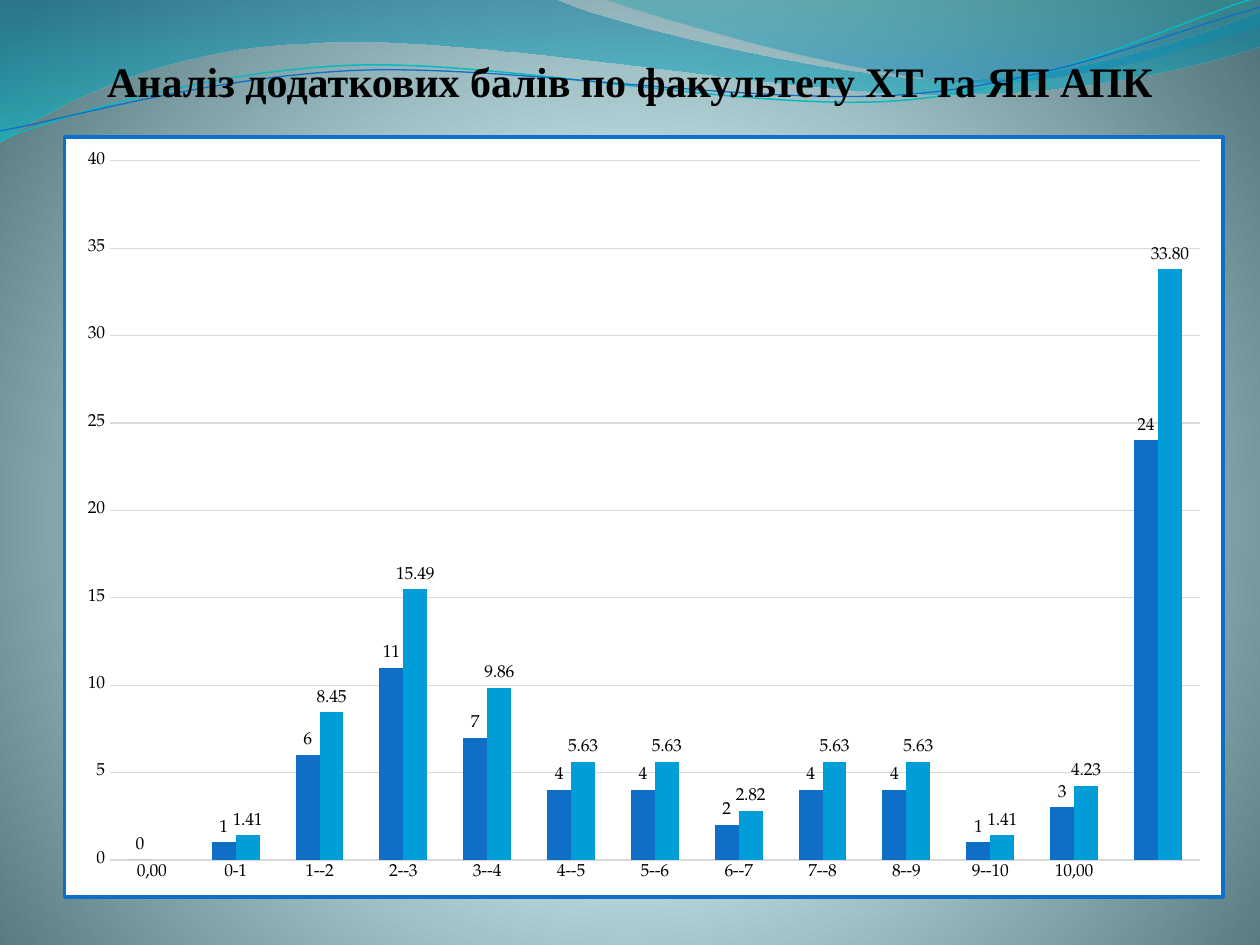
from math import cos, radians, sin

from lxml import etree
from pptx import Presentation
from pptx.chart.data import CategoryChartData
from pptx.dml.color import RGBColor
from pptx.enum.chart import XL_CHART_TYPE, XL_LABEL_POSITION, XL_TICK_MARK
from pptx.enum.text import MSO_ANCHOR, PP_ALIGN
from pptx.oxml import parse_xml
from pptx.oxml.ns import nsdecls, qn
from pptx.util import Cm, Pt

BLUE, SKY, BLACK, WHITE = "0F6FC6", "009DD9", "000000", "FFFFFF"
STRAND_TILT = 357.3

# Boxes (left, top, width, height) and outlines in cm:
# a pair is a straight step, six numbers are a cubic curve
UPPER_BOX = (-0.03, -0.03, 25.45, 2.9)
UPPER_WAVE = [
    (0, 0), (11.18, -0.03),
    (12.09, 0.43, 16.87, 1.6, 19.25, 1.6),
    (21.67, 1.6, 24.33, 0.66, 25.4, 0.23),
    (25.43, 0.91),
    (24.97, 1.12, 22.1, 1.93, 18.95, 1.91),
    (15.8, 1.91, 9.7, 0.71, 6.53, 0.86),
    (3.28, 0.91, 1.17, 2.11, -0.03, 2.87),
    (0, 0),
]
RIGHT_BOX = (12.17, -0.03, 13.23, 1.78)
RIGHT_WAVE = [
    (12.17, -0.03),
    (12.93, 0.28, 17.32, 1.57, 19.53, 1.65),
    (21.74, 1.75, 24.41, 0.81, 25.4, 0.53),
    (25.4, 0), (12.17, -0.03),
]
TEAL_BOX = (-0.05, 0.56, 25.45, 1.8)
TEAL_STRAND = [
    (0, 2.82),
    (1.22, 2.36, 4.01, 1.45, 7.04, 1.32),
    (10.03, 1.19, 15.06, 2.26, 18.11, 2.03),
    (21.16, 1.8, 23.83, 0.38, 25.35, -0.05),
]
BLUE_BOX = (-0.05, 0.76, 25.48, 1.47)
BLUE_STRAND = [
    (0, 2.64),
    (1.19, 2.44, 4.17, 1.55, 7.19, 1.42),
    (10.24, 1.3, 15.16, 2.13, 18.21, 1.91),
    (21.23, 1.7, 23.9, 0.53, 25.4, 0.15),
]

# Score ranges, number of students and their share in percent
RANGES = ["0,00", "0-1", "1--2", "2--3", "3--4", "4--5", "5--6",
          "6--7", "7--8", "8--9", "9--10", "10,00", ""]
COUNTS = [0, 1, 6, 11, 7, 4, 4, 2, 4, 4, 1, 3, 24]
SHARES = [None, 1.41, 8.45, 15.49, 9.86, 5.63, 5.63,
          2.82, 5.63, 5.63, 1.41, 4.23, 33.8]


def rgb(value):
    return RGBColor.from_string(value)


def set_gradient(fill, owner, stops, direction):
    """Stops are (position %, colour, opacity %); direction is lin or path XML."""
    fill.gradient()
    gradient = next(owner.iter(qn("a:gradFill")))
    for child in list(gradient):
        gradient.remove(child)
    stop_list = etree.SubElement(gradient, qn("a:gsLst"))
    for position, color, opacity in stops:
        stop = etree.SubElement(stop_list, qn("a:gs"), pos=str(position * 1000))
        tint = etree.SubElement(stop, qn("a:srgbClr"), val=color)
        if opacity < 100:
            etree.SubElement(tint, qn("a:alpha"), val=str(opacity * 1000))
    gradient.append(parse_xml(direction))


def level(outline, box):
    """Undo the strand tilt around the middle of its box."""
    left, top, width, height = box
    mid_x, mid_y = left + width / 2, top + height / 2
    angle = radians(360 - STRAND_TILT)
    leveled = []
    for step in outline:
        flat = []
        for x, y in zip(step[::2], step[1::2]):
            dx, dy = x - mid_x, y - mid_y
            flat += [mid_x + dx * cos(angle) - dy * sin(angle),
                     mid_y + dx * sin(angle) + dy * cos(angle)]
        leveled.append(tuple(flat))
    return leveled


def add_outline(slide, outline, box, close):
    """Lay out the end points, then bend the steps that are curves."""
    start, *rest = [(Cm(step[-2]), Cm(step[-1])) for step in outline]
    builder = slide.shapes.build_freeform(*start)
    builder.add_line_segments(rest, close=close)
    shape = builder.convert_to_shape()
    shape.shadow.inherit = False
    left, top, width, height = (Cm(length) for length in box)
    shape.left, shape.top, shape.width, shape.height = left, top, width, height
    track = next(shape._element.iter(qn("a:path")))
    track.set("w", str(width))
    track.set("h", str(height))
    for segment, step in zip(list(track), outline):
        bent = len(step) == 6
        drawn = etree.Element(qn("a:cubicBezTo") if bent else segment.tag)
        for x, y in zip(step[::2], step[1::2]):
            etree.SubElement(drawn, qn("a:pt"),
                             x=str(Cm(x) - left), y=str(Cm(y) - top))
        track.replace(segment, drawn)
    return shape


def add_wave(slide, outline, box, stops):
    wave = add_outline(slide, outline, box, True)
    wave.line.fill.background()
    set_gradient(wave.fill, wave._element, stops,
                 f'<a:lin {nsdecls("a")} ang="5400000" scaled="0"/>')


def add_strand(slide, outline, box, color, width):
    strand = add_outline(slide, level(outline, box), box, False)
    strand.rotation = STRAND_TILT
    strand.fill.background()
    strand.line.color.rgb = rgb(color)
    strand.line.width = Pt(width)


def add_background(slide):
    set_gradient(
        slide.background.fill, slide._element,
        [(0, "DEFBFF", 100), (25, "DDFAFF", 100), (100, "52767C", 100)],
        f'<a:path {nsdecls("a")} path="circle">'
        '<a:fillToRect l="10000" t="110000" r="10000" b="100000"/></a:path>')


def add_title(slide, text):
    title = slide.shapes.add_textbox(Cm(1.27), Cm(0.53), Cm(22.86), Cm(1.6))
    frame = title.text_frame
    frame.word_wrap = True
    frame.vertical_anchor = MSO_ANCHOR.BOTTOM
    frame.margin_left = frame.margin_right = frame.margin_bottom = 0
    frame.margin_top = Cm(0.13)
    paragraph = frame.paragraphs[0]
    paragraph.text = text
    paragraph.alignment = PP_ALIGN.CENTER
    font = paragraph.font
    font.name, font.size, font.bold = "Times New Roman", Pt(24), True
    font.color.rgb = rgb(BLACK)


def style_axes(chart):
    for axis in (chart.category_axis, chart.value_axis):
        axis.major_tick_mark = axis.minor_tick_mark = XL_TICK_MARK.NONE
        axis.format.line.fill.background()
    grid = chart.value_axis.major_gridlines.format.line
    grid.color.rgb = rgb("D9D9D9")
    grid.width = Pt(0.75)


def style_series(series, color, number_format):
    series.format.fill.solid()
    series.format.fill.fore_color.rgb = rgb(color)
    series.invert_if_negative = False
    labels = series.data_labels
    labels.show_value = True
    labels.position = XL_LABEL_POSITION.OUTSIDE_END
    labels.number_format = number_format
    labels.number_format_is_linked = False


def frame_chart(chart, fill, border, width):
    chart._chartSpace.find(qn("c:txPr")).addprevious(parse_xml(
        f'<c:spPr {nsdecls("c", "a")}>'
        f'<a:solidFill><a:srgbClr val="{fill}"/></a:solidFill>'
        f'<a:ln w="{Pt(width)}"><a:solidFill><a:srgbClr val="{border}"/>'
        '</a:solidFill></a:ln></c:spPr>'))


def drop_blank_categories(chart):
    for point in list(chart._chartSpace.iter(qn("c:pt"))):
        if not point.findtext(qn("c:v")):
            point.getparent().remove(point)


def add_score_chart(slide):
    scores = CategoryChartData()
    scores.categories = RANGES
    scores.add_series("Series 1", COUNTS)
    scores.add_series("Series 2", SHARES)
    chart = slide.shapes.add_chart(
        XL_CHART_TYPE.COLUMN_CLUSTERED,
        Cm(1.27), Cm(2.73), Cm(23.42), Cm(15.39), scores).chart
    chart.has_title = chart.has_legend = False
    chart.font.name, chart.font.size = "TeX Gyre Pagella", Pt(10)
    chart.font.color.rgb = rgb(BLACK)
    drop_blank_categories(chart)
    frame_chart(chart, WHITE, BLUE, 2)
    style_axes(chart)
    plot = chart.plots[0]
    plot.vary_by_categories = False
    plot.gap_width, plot.overlap = 150, 0
    for series, color, number_format in zip(plot.series, (BLUE, SKY), ("General", "0.00")):
        style_series(series, color, number_format)


def main():
    deck = Presentation()
    deck.slide_width, deck.slide_height = Cm(25.4), Cm(19.05)
    slide = deck.slides.add_slide(deck.slide_layouts[6])
    # Backdrop with flowing waves
    add_background(slide)
    add_wave(slide, UPPER_WAVE, UPPER_BOX, [(0, "0074A1", 45), (100, "00C6CF", 55)])
    add_wave(slide, RIGHT_WAVE, RIGHT_BOX, [(0, "00A1A9", 30), (80, "008BBF", 45)])
    add_strand(slide, TEAL_STRAND, TEAL_BOX, "0AB8BF", 0.85)
    add_strand(slide, BLUE_STRAND, BLUE_BOX, BLUE, 0.75)
    # Heading and chart
    add_title(slide, "Аналіз додаткових балів по факультету ХТ та ЯП АПК")
    add_score_chart(slide)
    deck.save("out.pptx")


if __name__ == "__main__":
    main()
